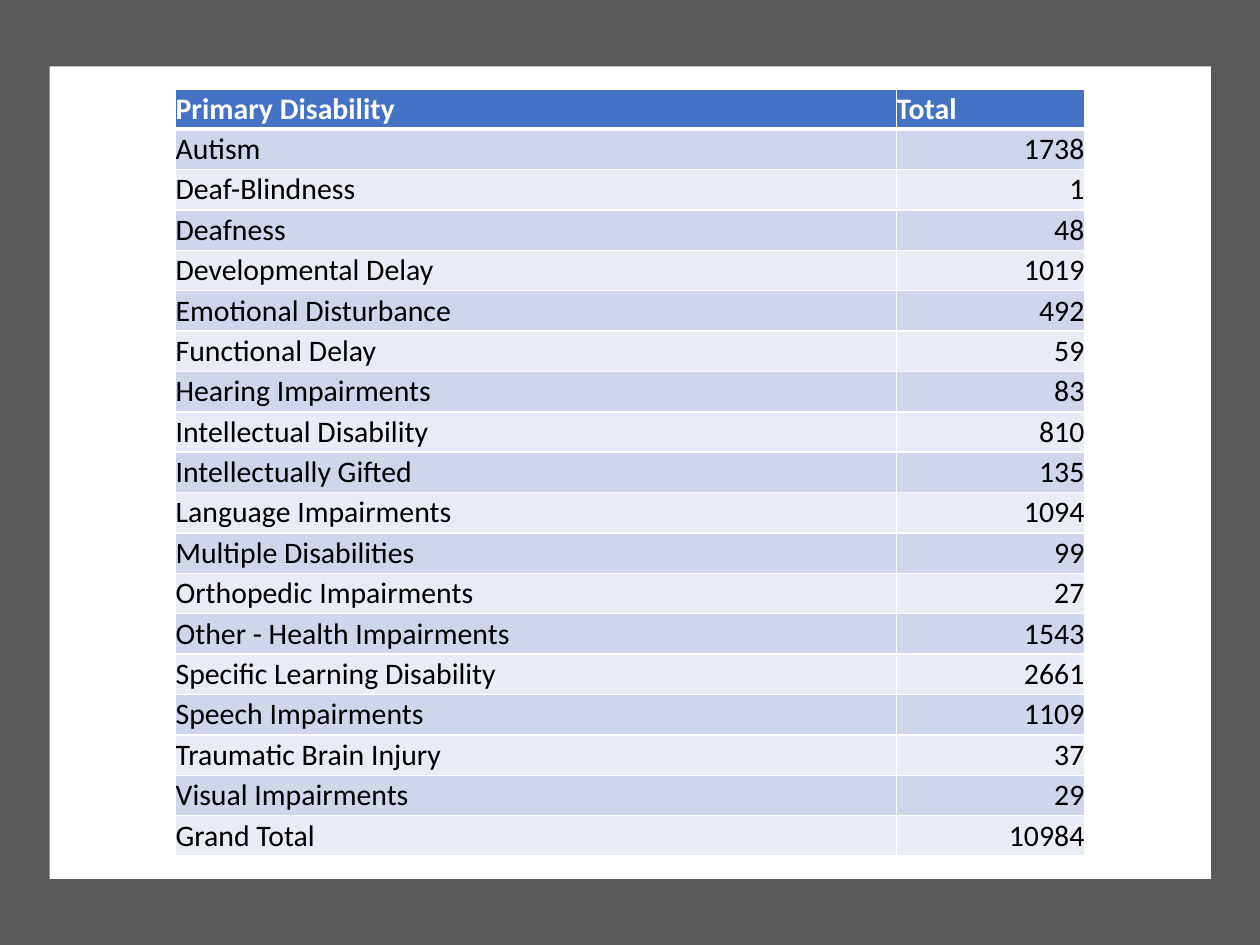
from lxml.etree import SubElement
from pptx import Presentation
from pptx.dml.color import RGBColor
from pptx.enum.shapes import MSO_SHAPE
from pptx.enum.text import MSO_ANCHOR, PP_ALIGN
from pptx.oxml.ns import qn
from pptx.util import Cm, Pt


def color(hex_value):
    return RGBColor.from_string(hex_value)


def add_border(cell, side, points):
    line = SubElement(cell._tc.get_or_add_tcPr(), qn(f"a:ln{side}"), w=str(Pt(points)))
    fill = SubElement(line, qn("a:solidFill"))
    SubElement(fill, qn("a:srgbClr"), val="FFFFFF")


disability_totals = [
    ("Primary Disability", "Total"),
    ("Autism", "1738"),
    ("Deaf-Blindness", "1"),
    ("Deafness", "48"),
    ("Developmental Delay", "1019"),
    ("Emotional Disturbance", "492"),
    ("Functional Delay", "59"),
    ("Hearing Impairments", "83"),
    ("Intellectual Disability", "810"),
    ("Intellectually Gifted", "135"),
    ("Language Impairments", "1094"),
    ("Multiple Disabilities", "99"),
    ("Orthopedic Impairments", "27"),
    ("Other - Health Impairments", "1543"),
    ("Specific Learning Disability", "2661"),
    ("Speech Impairments", "1109"),
    ("Traumatic Brain Injury", "37"),
    ("Visual Impairments", "29"),
    ("Grand Total", "10984"),
]

presentation = Presentation()
presentation.slide_width, presentation.slide_height = Cm(25.4), Cm(19.05)
slide = presentation.slides.add_slide(presentation.slide_layouts[6])

# Grey surround and white panel
for left, top, width, height, panel_color in [
    (0, 0, 25.4, 19.05, "595959"),
    (1, 1.34, 23.41, 16.38, "FFFFFF"),
]:
    panel = slide.shapes.add_shape(
        MSO_SHAPE.RECTANGLE, Cm(left), Cm(top), Cm(width), Cm(height)
    )
    panel.shadow.inherit = False
    panel.fill.solid()
    panel.fill.fore_color.rgb = color(panel_color)
    panel.line.fill.background()

# Table of totals by disability
row_count = len(disability_totals)
totals = slide.shapes.add_table(
    row_count, 2, Cm(3.54), Cm(1.79), Cm(18.32), Cm(15.47)
).table
for column, width in zip(totals.columns, (14.53, 3.79)):
    column.width = Cm(width)
for row in totals.rows:
    row.height = Cm(15.47 / row_count)

cell_format = {
    "margin_left": 0,
    "margin_right": 0,
    "margin_top": 0,
    "margin_bottom": 0,
    "vertical_anchor": MSO_ANCHOR.MIDDLE,
}
for row_index, entry in enumerate(disability_totals):
    is_header = row_index == 0
    band = "4472C4" if is_header else ("E9EBF5", "CFD5EA")[row_index % 2]
    # The rule under the header is thicker than the others
    border_widths = {
        "L": 1,
        "R": 1,
        "T": 3 if row_index == 1 else 1,
        "B": 3 if is_header else 1,
    }
    font_format = {"name": "Calibri", "size": Pt(17), "bold": is_header}
    for column_index, text in enumerate(entry):
        cell = totals.cell(row_index, column_index)
        cell.text = text
        for name, value in cell_format.items():
            setattr(cell, name, value)
        for side, points in border_widths.items():
            add_border(cell, side, points)
        cell.fill.solid()
        cell.fill.fore_color.rgb = color(band)

        paragraph = cell.text_frame.paragraphs[0]
        is_number = column_index == 1 and not is_header
        paragraph.alignment = PP_ALIGN.RIGHT if is_number else PP_ALIGN.LEFT
        font = paragraph.runs[0].font
        for name, value in font_format.items():
            setattr(font, name, value)
        font.color.rgb = color("FFFFFF" if is_header else "000000")

presentation.save("out.pptx")
